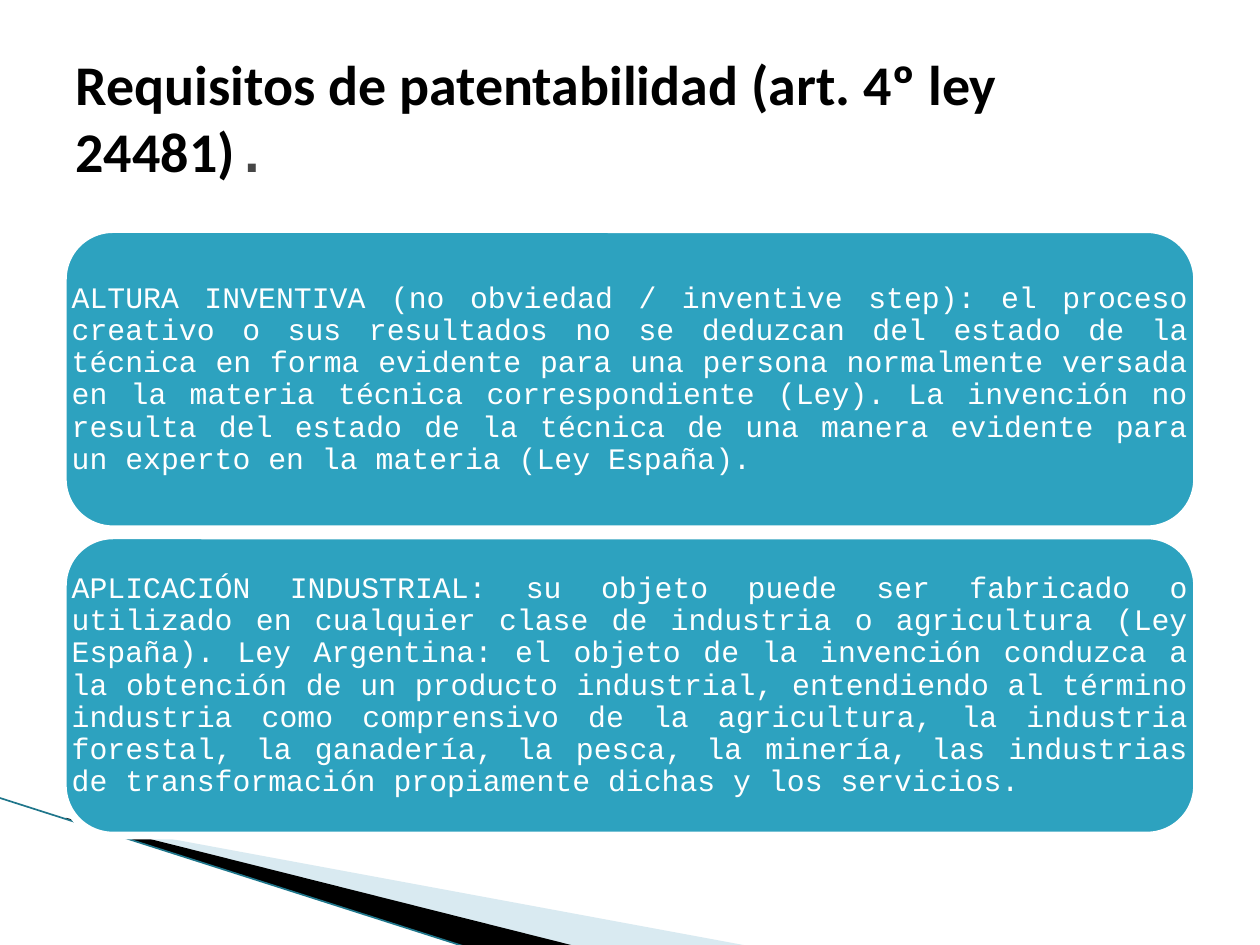
from dataclasses import dataclass

from lxml.etree import SubElement
from pptx import Presentation
from pptx.dml.color import RGBColor
from pptx.enum.shapes import MSO_CONNECTOR, MSO_SHAPE
from pptx.enum.text import MSO_ANCHOR, MSO_AUTO_SIZE, PP_ALIGN
from pptx.oxml.ns import qn
from pptx.util import Pt


@dataclass(frozen=True)
class Theme:
    white: RGBColor = RGBColor.from_string("FFFFFF")
    black: RGBColor = RGBColor.from_string("000000")
    grey: RGBColor = RGBColor.from_string("464646")
    card: RGBColor = RGBColor.from_string("2DA2BF")
    pale: RGBColor = RGBColor.from_string("A0CBDC")
    edge: RGBColor = RGBColor.from_string("1F768B")
    title_font: str = "Calibri"
    body_font: str = "Courier New"
    title_size: int = 32
    body_size: int = 17


THEME = Theme()
TITLE_RUNS = [
    ("Requisitos de patentabilidad (art. 4º ley 24481)", THEME.title_font, THEME.black),
    (".", THEME.body_font, THEME.grey),
]
REQUIREMENTS = [
    "ALTURA INVENTIVA (no obviedad / inventive step): el proceso creativo o sus "
    "resultados no se deduzcan del estado de la técnica en forma evidente para una "
    "persona normalmente versada en la materia técnica correspondiente (Ley). La "
    "invención no resulta del estado de la técnica de una manera evidente para un "
    "experto en la materia (Ley España).",
    "APLICACIÓN INDUSTRIAL: su objeto puede ser fabricado o utilizado en cualquier "
    "clase de industria o agricultura (Ley España). Ley Argentina: el objeto de la "
    "invención conduzca a la obtención de un producto industrial, entendiendo al "
    "término industria como comprensivo de la agricultura, la industria forestal, la "
    "ganadería, la pesca, la minería, las industrias de transformación propiamente "
    "dichas y los servicios.",
]


def apply_format(target, **values):
    for name, value in values.items():
        setattr(target, name, value)


def add_text(paragraph, text, color, **font_values):
    run = paragraph.add_run()
    run.text = text
    apply_format(run.font, **font_values)
    run.font.color.rgb = color


def add_wedge(slide, left, top, points, color, opacity=None):
    corners = [(Pt(left + x), Pt(top + y)) for x, y in points]
    builder = slide.shapes.build_freeform(*corners[0])
    builder.add_line_segments(corners[1:], close=True)
    wedge = builder.convert_to_shape()
    wedge.shadow.inherit = False
    wedge.fill.solid()
    wedge.fill.fore_color.rgb = color
    wedge.line.fill.background()
    if opacity:
        tint = wedge.fill._xPr.find(f"{qn('a:solidFill')}/{qn('a:srgbClr')}")
        SubElement(tint, qn("a:alpha"), val=str(opacity * 1000))


def add_corner_sweep(slide, left, top, width, height):
    wedge_top = top + 11.5
    add_wedge(slide, left + 39.6, wedge_top,
              [(0, 1.2), (388.8, 73.2), (288.7, 73.2), (0, 0.5)], THEME.pale, 40)
    add_wedge(slide, left + 38.2, wedge_top,
              [(0, 0), (290.8, 73.2), (229.6, 73.9), (0.7, 0.7)], THEME.black)
    edge = slide.shapes.add_connector(
        MSO_CONNECTOR.STRAIGHT, Pt(left), Pt(top), Pt(left + width), Pt(top + height))
    edge.line.color.rgb = THEME.edge
    edge.line.width = Pt(0.95)
    SubElement(edge.line._ln.getparent(), qn("a:effectLst"))


def add_title(slide, left, top, width, height):
    title = slide.shapes.title
    apply_format(title, left=Pt(left), top=Pt(top), width=Pt(width), height=Pt(height))
    apply_format(title.text_frame, word_wrap=True, auto_size=MSO_AUTO_SIZE.NONE,
                 vertical_anchor=MSO_ANCHOR.MIDDLE)
    heading = title.text_frame.paragraphs[0]
    heading.alignment = PP_ALIGN.LEFT
    for text, font_name, color in TITLE_RUNS:
        add_text(heading, text, color, name=font_name, size=Pt(THEME.title_size), bold=True)


def add_requirement(slide, left, top, width, height, text):
    box = [Pt(length) for length in (left, top, width, height)]
    card = slide.shapes.add_shape(MSO_SHAPE.ROUNDED_RECTANGLE, *box)
    card.shadow.inherit = False
    card.fill.solid()
    card.fill.fore_color.rgb = THEME.card
    card.line.color.rgb = THEME.white
    card.line.width = Pt(4.33)

    frame = slide.shapes.add_textbox(*box).text_frame
    margins = {f"margin_{side}": Pt(5) for side in ("left", "top", "right", "bottom")}
    apply_format(frame, word_wrap=True, vertical_anchor=MSO_ANCHOR.MIDDLE, **margins)
    requirement = frame.paragraphs[0]
    apply_format(requirement, alignment=PP_ALIGN.JUSTIFY, line_spacing=0.9)
    add_text(requirement, text, THEME.white, name=THEME.body_font, size=Pt(THEME.body_size))


def add_requirements(slide, left, top, width, height, gap=3.6):
    count = len(REQUIREMENTS)
    card_height = (height - gap * (count - 1)) / count
    for index, text in enumerate(REQUIREMENTS):
        card_top = top + index * (card_height + gap)
        add_requirement(slide, left, card_top, width, card_height, text)


def main():
    presentation = Presentation()
    apply_format(presentation, slide_width=Pt(720), slide_height=Pt(540))
    slide = presentation.slides.add_slide(presentation.slide_layouts[5])
    add_corner_sweep(slide, -0.7, 455.8, 267.8, 85.6)
    add_title(slide, 36, 21.6, 648, 90)
    add_requirements(slide, 36, 131, 648, 346.4)
    presentation.save("out.pptx")


if __name__ == "__main__":
    main()
